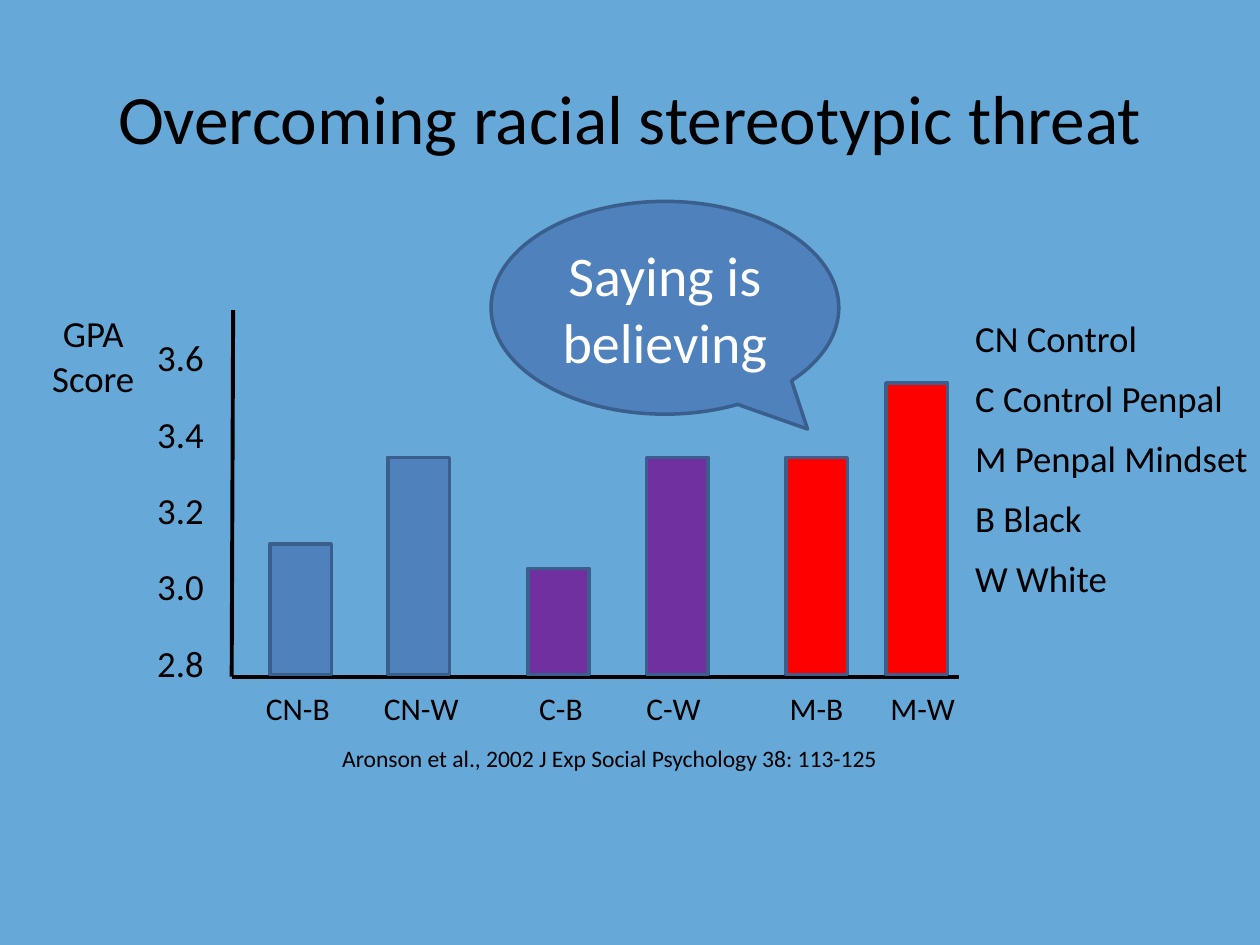
from pptx import Presentation
from pptx.dml.color import RGBColor
from pptx.enum.shapes import MSO_CONNECTOR, MSO_SHAPE
from pptx.enum.text import MSO_ANCHOR, PP_ALIGN
from pptx.oxml.ns import qn
from pptx.util import Cm, Pt

LEFT, CENTER = PP_ALIGN.LEFT, PP_ALIGN.CENTER
TOP, MIDDLE = MSO_ANCHOR.TOP, MSO_ANCHOR.MIDDLE
STRAIGHT = MSO_CONNECTOR.STRAIGHT
RECTANGLE, CALLOUT = MSO_SHAPE.RECTANGLE, MSO_SHAPE.OVAL_CALLOUT

SKY = RGBColor(0x66, 0xA9, 0xD9)
BLUE = RGBColor(0x4F, 0x81, 0xBD)
OUTLINE = RGBColor(0x3A, 0x5F, 0x8C)
PURPLE = RGBColor(0x70, 0x30, 0xA0)
RED = RGBColor(0xFF, 0x00, 0x00)
BLACK = RGBColor(0x00, 0x00, 0x00)
WHITE = RGBColor(0xFF, 0xFF, 0xFF)

FONT = "Calibri"
AXIS_X, AXIS_TOP, AXIS_RIGHT, AXIS_Y = 4.67, 6.25, 19.33, 13.64
BAR_WIDTH, BAR_BOTTOM = 1.24, 13.6
GROUP_LABEL_TOP, GROUP_LABEL_WIDTH = 13.77, 2.3
TICK_TOP, TICK_STEP = 6.63, 1.54

TICKS = ["3.6", "3.4", "3.2", "3.0", "2.8"]
GROUPS = [
    ("CN-B", BLUE, 5.44, 10.97, 5.11),
    ("CN-W", BLUE, 7.82, 9.22, 7.49),
    ("C-B", PURPLE, 10.64, 11.46, 10.62),
    ("C-W", PURPLE, 13.03, 9.22, 12.78),
    ("M-B", RED, 15.85, 9.22, 15.67),
    ("M-W", RED, 17.86, 7.72, 17.7),
]
LEGEND = ["CN Control", "C Control Penpal", "M Penpal Mindset", "B Black", "W White"]


def write(frame, text, size, color=BLACK, align=LEFT, gap=0):
    """Fill a text frame, one paragraph per line of text."""
    frame.text = text
    for index, paragraph in enumerate(frame.paragraphs):
        paragraph.alignment = align
        paragraph.space_before = Pt(gap if index else 0)
        font = paragraph.runs[0].font
        font.name, font.size, font.color.rgb = FONT, Pt(size), color


def add_label(slide, box, text, size, align=LEFT, anchor=TOP, wrap=False, gap=0):
    """Add a text box at box, given in centimetres."""
    frame = slide.shapes.add_textbox(*map(Cm, box)).text_frame
    frame.word_wrap = wrap
    frame.vertical_anchor = anchor
    write(frame, text, size, align=align, gap=gap)


def add_filled(slide, kind, box, color):
    """Add an outlined preset shape without shadow."""
    shape = slide.shapes.add_shape(kind, *map(Cm, box))
    shape.shadow.inherit = False
    shape.fill.solid()
    shape.fill.fore_color.rgb = color
    shape.line.color.rgb = OUTLINE
    shape.line.width = Pt(2)
    return shape


def add_axis(slide, ends):
    """Add a black axis line between two points."""
    axis = slide.shapes.add_connector(STRAIGHT, *map(Cm, ends))
    axis.line.color.rgb = BLACK
    axis.line.width = Pt(2.25)
    properties = axis._element.spPr
    properties.append(properties.makeelement(qn("a:effectLst"), {}))


def add_bars(slide):
    """Draw the bars with their group labels."""
    for name, color, left, top, label_left in GROUPS:
        add_filled(slide, RECTANGLE, (left, top, BAR_WIDTH, BAR_BOTTOM - top), color)
        add_label(slide, (label_left, GROUP_LABEL_TOP, GROUP_LABEL_WIDTH, 1.02), name, 18)


def add_scale(slide):
    """Draw both axes and the score scale."""
    add_axis(slide, (AXIS_X + 0.03, AXIS_TOP, AXIS_X, AXIS_Y))
    add_axis(slide, (AXIS_RIGHT, AXIS_Y, AXIS_X, AXIS_Y))
    for row, score in enumerate(TICKS):
        add_label(slide, (2.92, TICK_TOP + row * TICK_STEP, 1.68, 1.14), score, 21)
    add_label(slide, (0.79, 6.15, 2.18, 2.06), "GPA\nScore", 21, CENTER)


def add_callout(slide):
    """Draw the speech bubble that points at the mindset bars."""
    bubble = add_filled(slide, CALLOUT, (9.9, 4.06, 7.01, 4.29), BLUE)
    bubble.adjustments[0] = 0.41
    bubble.adjustments[1] = 0.57
    bubble.text_frame.word_wrap = True
    bubble.text_frame.vertical_anchor = MIDDLE
    write(bubble.text_frame, "Saying is believing", 32, WHITE, CENTER)


def main():
    """Build and save the slide."""
    presentation = Presentation()
    presentation.slide_width, presentation.slide_height = Cm(25.4), Cm(19.05)
    slide = presentation.slides.add_slide(presentation.slide_layouts[6])
    slide.background.fill.solid()
    slide.background.fill.fore_color.rgb = SKY

    add_label(slide, (1.27, 0.76, 22.86, 3.18), "Overcoming racial stereotypic threat",
              39.6, CENTER, MIDDLE, wrap=True)
    add_scale(slide)
    add_bars(slide)
    add_label(slide, (19.41, 6.25, 6.07, 6.02), "\n".join(LEGEND), 21, gap=9)
    add_label(slide, (6.65, 14.88, 11.46, 0.84),
              "Aronson et al., 2002 J Exp Social Psychology 38: 113-125", 13.5)
    add_callout(slide)
    presentation.save("out.pptx")


if __name__ == "__main__":
    main()
